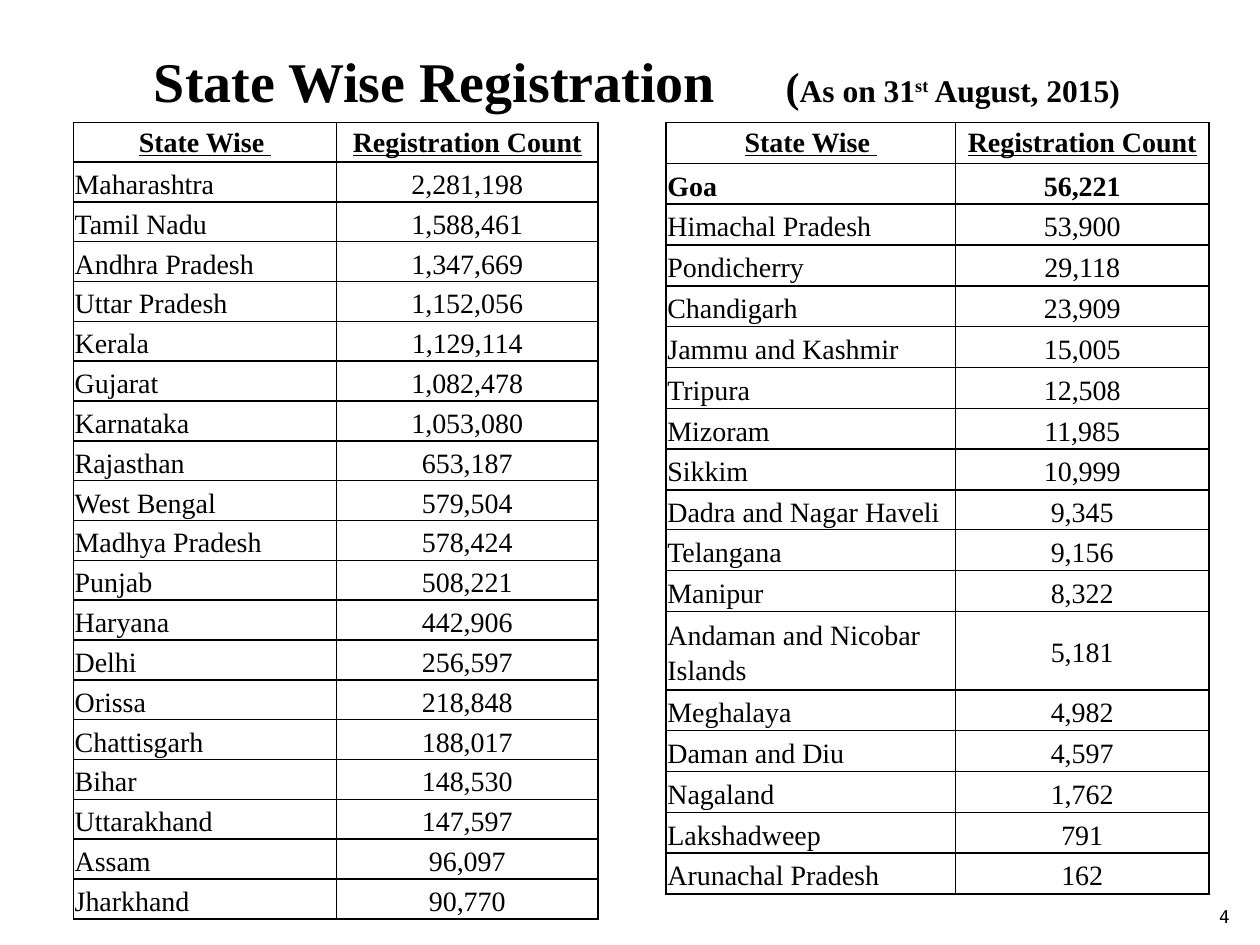
"""Build the state wise registration slide with its two tables."""
from lxml.etree import SubElement
from pptx import Presentation
from pptx.dml.color import RGBColor
from pptx.enum.text import MSO_ANCHOR, PP_ALIGN
from pptx.oxml.ns import qn
from pptx.util import Pt

COLORS = {"ink": "000000"}
SERIF = "Times New Roman"
MONO = "DejaVu Sans Mono"
TITLE = [("State Wise Registration\t", 32, 0), ("(", 24, 0), ("As on 31", 18, 0),
         ("st", 18, 30000), (" August, 2015)", 18, 0)]
DATE_TAB = 361
PAGE_NUMBER = "4"
HEADER = ("State Wise ", "Registration Count")
LARGER_STATES = [
    ("Maharashtra", "2,281,198"), ("Tamil Nadu", "1,588,461"),
    ("Andhra Pradesh", "1,347,669"), ("Uttar Pradesh", "1,152,056"),
    ("Kerala", "1,129,114"), ("Gujarat", "1,082,478"),
    ("Karnataka", "1,053,080"), ("Rajasthan", "653,187"),
    ("West Bengal", "579,504"), ("Madhya Pradesh", "578,424"),
    ("Punjab", "508,221"), ("Haryana", "442,906"), ("Delhi", "256,597"),
    ("Orissa", "218,848"), ("Chattisgarh", "188,017"), ("Bihar", "148,530"),
    ("Uttarakhand", "147,597"), ("Assam", "96,097"), ("Jharkhand", "90,770"),
]
SMALLER_STATES = [
    ("Goa", "56,221"), ("Himachal Pradesh", "53,900"),
    ("Pondicherry", "29,118"), ("Chandigarh", "23,909"),
    ("Jammu and Kashmir", "15,005"), ("Tripura", "12,508"),
    ("Mizoram", "11,985"), ("Sikkim", "10,999"),
    ("Dadra and Nagar Haveli", "9,345"), ("Telangana", "9,156"),
    ("Manipur", "8,322"), ("Andaman and Nicobar Islands", "5,181"),
    ("Meghalaya", "4,982"), ("Daman and Diu", "4,597"),
    ("Nagaland", "1,762"), ("Lakshadweep", "791"),
    ("Arunachal Pradesh", "162"),
]
TABLES = [
    {"left": 42, "columns": (150.4, 149.2), "row": 22.64, "states": LARGER_STATES},
    {"left": 380.7, "columns": (165.3, 144.9), "row": 23.35, "states": SMALLER_STATES},
]
TABLE_TOP = 70
SPECIAL_HEIGHTS = {"Dadra and Nagar Haveli": 21.2, "Andaman and Nicobar Islands": 19.4}
BOLD_STATES = {"Goa"}


def style_font(font, name, size, bold=False, underline=False):
    font.name, font.size = name, Pt(size)
    font.bold, font.underline = bold, underline
    font.color.rgb = RGBColor.from_string(COLORS["ink"])


def set_insets(target, left, top, right, bottom):
    target.margin_left, target.margin_top = Pt(left), Pt(top)
    target.margin_right, target.margin_bottom = Pt(right), Pt(bottom)


def add_box(page, left, top, width, height):
    frame = page.shapes.add_textbox(Pt(left), Pt(top), Pt(width), Pt(height)).text_frame
    frame.word_wrap = True
    return frame


def add_title(page):
    frame = add_box(page, 72, 18, 589, 41.8)
    set_insets(frame, 16, 8.4, 7.2, 3.6)
    para = frame.paragraphs[0]
    tabs = SubElement(para._p.get_or_add_pPr(), qn("a:tabLst"))
    SubElement(tabs, qn("a:tab"), pos=str(Pt(DATE_TAB)), algn="l")
    for text, size, raised in TITLE:
        span = para.add_run()
        span.text = text
        style_font(span.font, SERIF, size, bold=True)
        if raised:
            span._r.get_or_add_rPr().set("baseline", str(raised))


def add_page_number(page):
    frame = add_box(page, 681, 504.7, 28.8, 28.8)
    frame.vertical_anchor = MSO_ANCHOR.BOTTOM
    para = frame.paragraphs[0]
    para.text, para.alignment = PAGE_NUMBER, PP_ALIGN.RIGHT
    style_font(para.font, MONO, 10)


def add_borders(cell):
    properties = cell._tc.get_or_add_tcPr()
    for side in ("lnL", "lnR", "lnT", "lnB"):
        line = SubElement(properties, qn(f"a:{side}"), w=str(Pt(1)))
        fill = SubElement(line, qn("a:solidFill"))
        SubElement(fill, qn("a:srgbClr"), val=COLORS["ink"])


def fill_cell(cell, text, is_header, centred, bold):
    add_borders(cell)
    cell.fill.background()
    if is_header:
        set_insets(cell, 5.4, 0, 5.4, 0)
    else:
        set_insets(cell, 0.7, 0.7, 0.7, 0)
    cell.vertical_anchor = MSO_ANCHOR.TOP if is_header else MSO_ANCHOR.MIDDLE
    para = cell.text_frame.paragraphs[0]
    para.text, para.line_spacing = text, 1.15
    para.alignment = PP_ALIGN.CENTER if centred else PP_ALIGN.LEFT
    style_font(para.font, SERIF, 16, bold, is_header)


def add_state_table(page, left, columns, row, states):
    records = [HEADER] + states
    heights = [SPECIAL_HEIGHTS.get(name, row) for name, count in records]
    table = page.shapes.add_table(len(records), len(columns), Pt(left), Pt(TABLE_TOP),
                                  Pt(sum(columns)), Pt(sum(heights))).table
    table.first_row = table.horz_banding = False
    for column, width in zip(table.columns, columns):
        column.width = Pt(width)
    for index, (record, height) in enumerate(zip(records, heights)):
        table.rows[index].height = Pt(height)
        is_header = index == 0
        bold = is_header or record[0] in BOLD_STATES
        for position, text in enumerate(record):
            fill_cell(table.cell(index, position), text, is_header,
                      is_header or position == 1, bold)


def main():
    deck = Presentation()
    deck.slide_width, deck.slide_height = Pt(720), Pt(540)
    page = deck.slides.add_slide(deck.slide_layouts[6])
    add_title(page)
    add_page_number(page)
    for table in TABLES:
        add_state_table(page, **table)
    deck.save("out.pptx")


if __name__ == "__main__":
    main()
